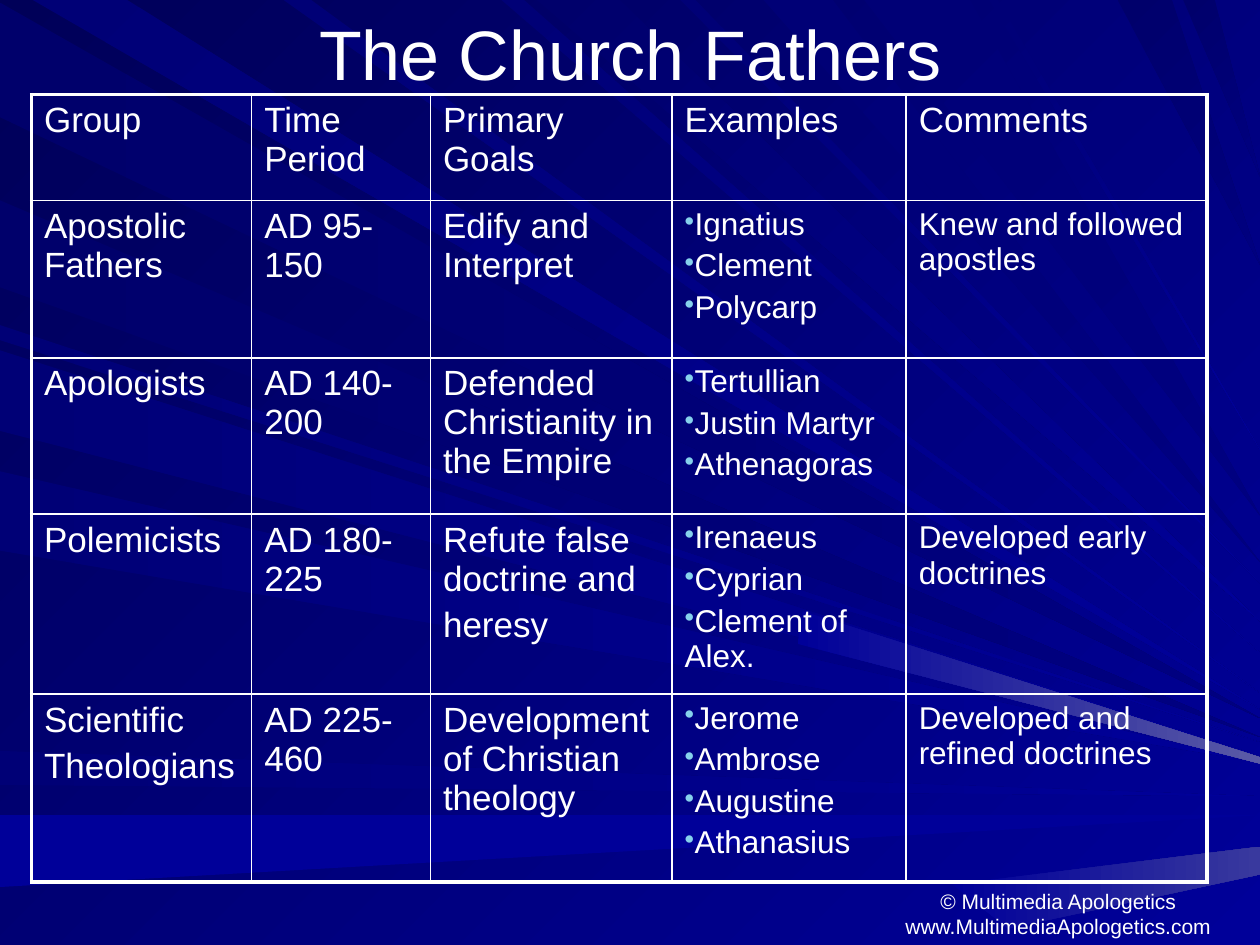
from lxml import etree
from pptx import Presentation
from pptx import util as u
from pptx.dml.color import RGBColor
from pptx.enum import text
from pptx.oxml.ns import qn

WIDTH, HEIGHT = u.Inches(10), u.Inches(7.5)
FONT, WHITE, BULLET = "Arial", "FFFFFF", "86D1EC"
THIN, THICK = 1, 2.25
NAVY, ROYAL, GLOW = "000080", "000099", "5A5AA6"
DUSK, INK = "00006B", "000076"

GRID = 1000
LEFT_RAYS = [
    (DUSK, NAVY, 2, 93, 570),
    (DUSK, NAVY, 159, 228, 585),
    (INK, ROYAL, 258, 270, 589),
    (INK, ROYAL, 278, 342, 600),
    (INK, ROYAL, 374, 437, 605),
    (INK, ROYAL, 596, 623, 632),
    (ROYAL, ROYAL, 647, 704, 647),
]
TOP_RAYS = [
    (INK, ROYAL, 26, 101, 563),
    (INK, ROYAL, 225, 247, 550),
    (INK, ROYAL, 398, 416, 518),
    (DUSK, ROYAL, 426, 492, 493),
    (INK, ROYAL, 540, 552, 463),
    (INK, NAVY, 606, 661, 446),
    (INK, NAVY, 686, 770, 409),
    (INK, ROYAL, 785, 792, 357),
    (DUSK, NAVY, 887, 930, 210),
    (DUSK, NAVY, 939, 964, 140),
]
GLOWS = [
    (GLOW, [(637, 485), (633, 511), (GRID, 606), (GRID, 601)]),
    ("39399E", [(756, 702), (800, 737), (GRID, 694), (GRID, 672)]),
]

COLUMNS = [1.75, 1.42, 1.92, 1.86, 2.39]
ROWS = [0.84, 1.25, 1.24, 1.43, 1.49]
EXAMPLES, COMMENTS = 3, 4
CELLS = [
    ["Group", "Time Period", "Primary Goals", "Examples", "Comments"],
    ["Apostolic Fathers", "AD 95-150", "Edify and Interpret",
     "Ignatius\nClement\nPolycarp", "Knew and followed apostles"],
    ["Apologists", "AD 140-200", "Defended Christianity in the Empire",
     "Tertullian\nJustin Martyr\nAthenagoras", ""],
    ["Polemicists", "AD 180-225", "Refute false doctrine and\nheresy",
     "Irenaeus\nCyprian\nClement of Alex.", "Developed early doctrines"],
    ["Scientific\nTheologians", "AD 225-460", "Development of Christian theology",
     "Jerome\nAmbrose\nAugustine\nAthanasius", "Developed and refined doctrines"],
]


def share(left, top, width, height):
    return [round(part * whole) for part, whole in
            zip((left, top, width, height), (WIDTH, HEIGHT) * 2)]


def color(value):
    return RGBColor.from_string(value)


def paint(fill, start, end, angle):
    if start == end:
        fill.solid()
        fill.fore_color.rgb = color(start)
        return
    fill.gradient()
    fill.gradient_angle = (360 - angle) % 360
    for stop, value in zip(fill.gradient_stops, (start, end)):
        stop.color.rgb = color(value)


def style(paragraph, size, align=text.PP_ALIGN.LEFT):
    paragraph.alignment = align
    paragraph.font.size = u.Pt(size)
    paragraph.font.name = FONT
    paragraph.font.color.rgb = color(WHITE)


def add_bullet(paragraph):
    properties = paragraph._p.get_or_add_pPr()
    properties.set("marL", "0")
    properties.set("indent", "0")
    bullet_color = etree.SubElement(properties, qn("a:buClr"))
    etree.SubElement(bullet_color, qn("a:srgbClr"), val=BULLET)
    etree.SubElement(properties, qn("a:buSzPct"), val="90000")
    etree.SubElement(properties, qn("a:buChar"), char="•")


def add_borders(cell, widths):
    properties = cell._tc.get_or_add_tcPr()
    for side, width in zip("LRTB", widths):
        line = etree.SubElement(properties, qn(f"a:ln{side}"), w=str(u.Pt(width)))
        fill = etree.SubElement(line, qn("a:solidFill"))
        etree.SubElement(fill, qn("a:srgbClr"), val=WHITE)


def add_ray(group, box, points, start, end, angle):
    left, top, width, height = box
    builder = group.shapes.build_freeform(*points[0], scale=width / GRID)
    builder.add_line_segments(points[1:], close=True)
    ray = builder.convert_to_shape(left, top)
    ray.shadow.inherit = False
    ray.line.fill.background()
    paint(ray.fill, start, end, angle)


def add_rays(slide, box):
    group = slide.shapes.add_group_shape()
    for start, end, near, far, tip in LEFT_RAYS:
        add_ray(group, box, [(0, near), (0, far), (GRID, tip)], start, end, 0)
    for start, end, near, far, tip in TOP_RAYS:
        add_ray(group, box, [(near, 0), (far, 0), (GRID, tip)], start, end, 45)
    for end, points in GLOWS:
        add_ray(group, box, points, ROYAL, end, 0)
    slide.shapes._spTree.insert(2, group._element)


def set_title(slide, box):
    title = slide.shapes.title
    title.left, title.top, title.width, title.height = box
    frame = title.text_frame
    frame.text = "The Church Fathers"
    frame.auto_size = text.MSO_AUTO_SIZE.NONE
    frame.vertical_anchor = text.MSO_ANCHOR.MIDDLE
    style(frame.paragraphs[0], 40, text.PP_ALIGN.CENTER)


def fill_cell(cell, content, size, bulleted):
    cell.text = content
    for index, paragraph in enumerate(cell.text_frame.paragraphs):
        if bulleted:
            add_bullet(paragraph)
        if index:
            paragraph.space_before = u.Pt(size * 0.2)
        style(paragraph, size)


def add_fathers_table(slide, box):
    width, height = box[2:]
    table = slide.shapes.add_table(len(ROWS), len(COLUMNS), *box).table
    table.first_row = table.horz_banding = False
    for column, part in zip(table.columns, COLUMNS):
        column.width = round(width * part / sum(COLUMNS))
    for row, part in zip(table.rows, ROWS):
        row.height = round(height * part / sum(ROWS))
    last_row, last_column = len(ROWS) - 1, len(COLUMNS) - 1
    for r, contents in enumerate(CELLS):
        for c, content in enumerate(contents):
            cell = table.cell(r, c)
            outer = (c == 0, c == last_column, r == 0, r == last_row)
            add_borders(cell, [THICK if edge else THIN for edge in outer])
            cell.fill.background()
            size = 18 if r and c in (EXAMPLES, COMMENTS) else 20
            fill_cell(cell, content, size, bool(r) and c == EXAMPLES)


def add_credit(slide, box):
    frame = slide.shapes.add_textbox(*box).text_frame
    frame.word_wrap = True
    frame.vertical_anchor = text.MSO_ANCHOR.BOTTOM
    frame.text = "© Multimedia Apologetics\nwww.MultimediaApologetics.com"
    for paragraph in frame.paragraphs:
        style(paragraph, 12, text.PP_ALIGN.CENTER)


def main():
    presentation = Presentation()
    presentation.slide_width, presentation.slide_height = WIDTH, HEIGHT
    slide = presentation.slides.add_slide(presentation.slide_layouts[5])
    paint(slide.background.fill, "000058", ROYAL, 45)
    add_rays(slide, share(0, 0, 1, 1))
    add_credit(slide, share(0.68, 14 / 15, 0.32, 1 / 15))
    set_title(slide, share(0.05, 1 / 45, 0.9, 1 / 15))
    add_fathers_table(slide, share(0.025, 0.1, 0.933, 5 / 6))
    presentation.save("out.pptx")


if __name__ == "__main__":
    main()
